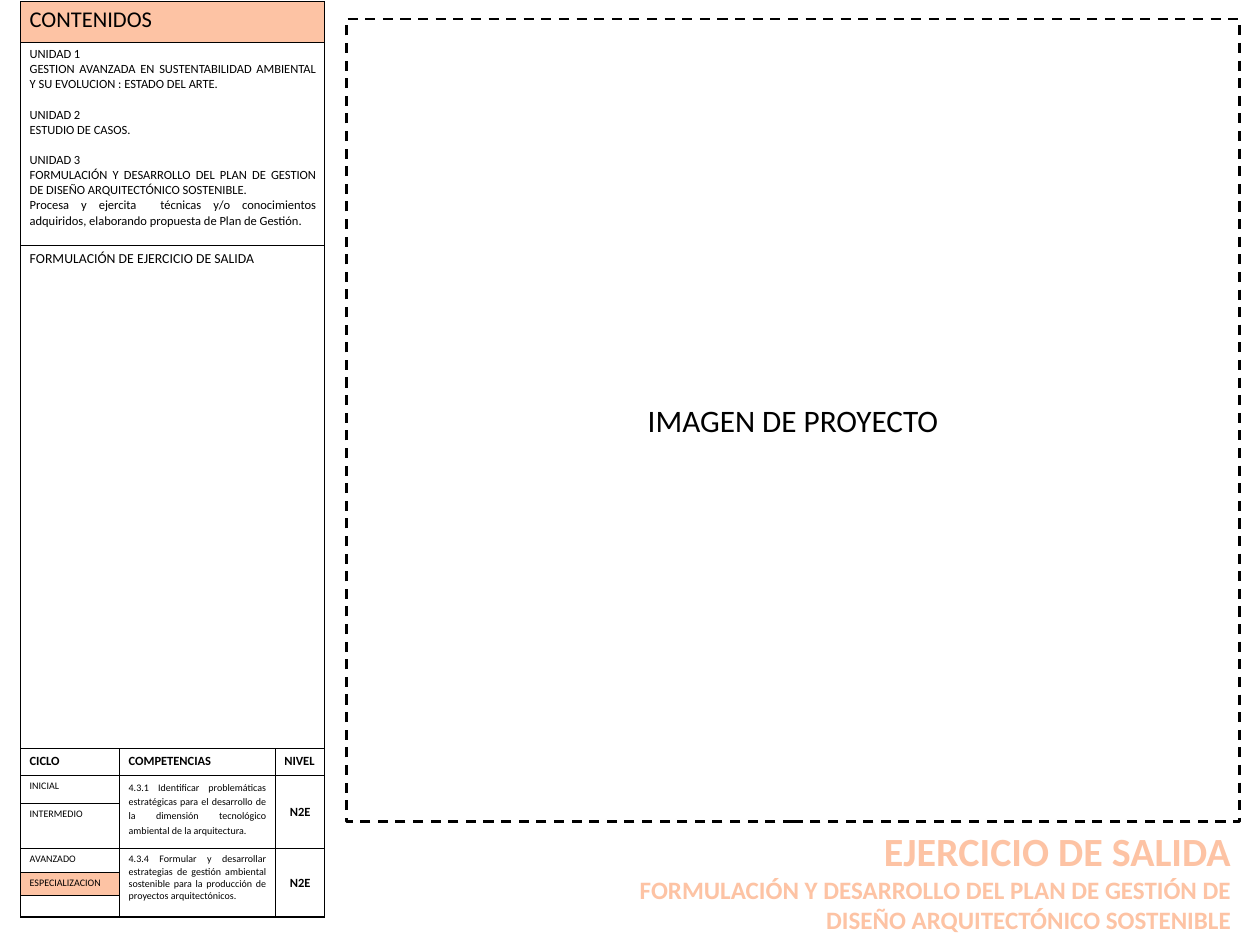
"""Build the course sheet: contents table, project frame and title."""
from lxml.etree import SubElement
from pptx import Presentation
from pptx.dml.color import RGBColor
from pptx.enum.dml import MSO_LINE
from pptx.enum.shapes import MSO_SHAPE
from pptx.enum.text import MSO_ANCHOR, PP_ALIGN
from pptx.oxml.ns import qn
from pptx.util import Inches, Pt

PEACH = RGBColor(0xFD, 0xC3, 0xA4)
BLACK = RGBColor(0, 0, 0)
FONT = "Calibri"
WIDE, HIGH = 14, 10.5
COLS = [1.1, 1.73, 0.55]
ROWS = [0.45, 2.26, 5.59, 0.3, 0.31, 0.5, 0.26, 0.26, 0.24]
UNITS = [
    ["UNIDAD 1", "GESTION AVANZADA EN SUSTENTABILIDAD AMBIENTAL Y SU EVOLUCION : ESTADO DEL ARTE."],
    ["UNIDAD 2", "ESTUDIO DE CASOS."],
    ["UNIDAD 3", "FORMULACIÓN Y DESARROLLO DEL PLAN DE GESTION DE DISEÑO ARQUITECTÓNICO SOSTENIBLE.",
     "Procesa y ejercita  técnicas y/o conocimientos adquiridos, elaborando propuesta de Plan de Gestión."],
]
BANDS = [("CONTENIDOS", 18), (None, 10), ("FORMULACIÓN DE EJERCICIO DE SALIDA", 11)]
HEADS = ["CICLO", "COMPETENCIAS", "NIVEL"]
CYCLES = ["INICIAL", "INTERMEDIO", "AVANZADO", "ESPECIALIZACION", ""]
SKILLS = [
    (4, 5, "4.3.1 Identificar problemáticas estratégicas para el desarrollo de la "
           "dimensión tecnológico ambiental de la arquitectura.", "N2E"),
    (6, 8, "4.3.4 Formular y desarrollar estrategias de gestión ambiental sostenible "
           "para la producción de proyectos arquitectónicos.", "N2E"),
]
TITLE = [("EJERCICIO DE SALIDA", 32),
         ("FORMULACIÓN Y DESARROLLO DEL PLAN DE GESTIÓN DE DISEÑO ARQUITECTÓNICO SOSTENIBLE", 20)]
PEACHY = {(0, 0), (7, 0)}
THIN = {(1, 0), (4, 0), (5, 0), (6, 0), (7, 0)}


def style(para, size, align, bold=False, color=BLACK):
    """Set the look of one paragraph."""
    para.alignment = align
    font = para.font
    font.name, font.size, font.bold = FONT, Pt(size), bold
    font.color.rgb = color


def write(cell, text, size, bold=False, align=PP_ALIGN.JUSTIFY):
    """Fill a cell and return its paragraphs."""
    cell.text = text
    for para in cell.text_frame.paragraphs:
        style(para, size, align, bold)
    return cell.text_frame.paragraphs


def edge(cell, side, width):
    """Draw one border of a cell."""
    line = SubElement(cell._tc.get_or_add_tcPr(), qn("a:" + side), w=str(Pt(width)))
    fill = SubElement(line, qn("a:solidFill"))
    SubElement(fill, qn("a:srgbClr"), val=str(BLACK))


def paint(table):
    """Give every cell its borders and fill."""
    for row in range(len(ROWS)):
        for col in range(len(COLS)):
            cell = table.cell(row, col)
            band = 0 if row < len(BANDS) else col
            edge(cell, "lnL", 1)
            edge(cell, "lnR", 1)
            edge(cell, "lnT", 0.5 if (row - 1, band) in THIN else 1)
            edge(cell, "lnB", 0.5 if (row, band) in THIN else 1)
            if (row, band) in PEACHY:
                cell.fill.solid()
                cell.fill.fore_color.rgb = PEACH
            else:
                cell.fill.background()


def add_grid(slide):
    """Add the contents table."""
    table = slide.shapes.add_table(len(ROWS), len(COLS), Inches(0.23), Inches(0.02),
                                   Inches(sum(COLS)), Inches(sum(ROWS))).table
    table.first_row = table.horz_banding = False
    for col, size in zip(table.columns, COLS):
        col.width = Inches(size)
    for row, size in zip(table.rows, ROWS):
        row.height = Inches(size)
    paint(table)
    for row, (text, size) in enumerate(BANDS):
        cell = table.cell(row, 0)
        cell.merge(table.cell(row, len(COLS) - 1))
        paras = write(cell, text or "\n".join(sum(UNITS, [])), size)
        for para in paras:
            if para.text in [unit[0] for unit in UNITS[1:]]:
                para.space_before = Pt(12)
    top = len(BANDS)
    for col, text in enumerate(HEADS):
        write(table.cell(top, col), text, 10, True)
    for row, text in enumerate(CYCLES, top + 1):
        write(table.cell(row, 0), text, 8)
    for first, last, text, level in SKILLS:
        for col in (1, 2):
            table.cell(first, col).merge(table.cell(last, col))
        para = write(table.cell(first, 1), text, 8)[0]
        if first == top + 1:
            para.line_spacing, para.space_after = 1.15, Pt(10)
        mark = table.cell(first, 2)
        write(mark, level, 10, True, PP_ALIGN.CENTER)
        mark.vertical_anchor = MSO_ANCHOR.MIDDLE


def add_frame(slide):
    """Add the dashed frame for the project."""
    frame = slide.shapes.add_shape(MSO_SHAPE.RECTANGLE, Inches(3.85), Inches(0.21),
                                   Inches(9.92), Inches(8.92))
    frame.shadow.inherit = False
    frame.fill.background()
    frame.line.color.rgb = BLACK
    frame.line.width = Pt(2)
    frame.line.dash_style = MSO_LINE.DASH
    frame.text_frame.text = "IMAGEN DE PROYECTO"
    frame.text_frame.vertical_anchor = MSO_ANCHOR.MIDDLE
    style(frame.text_frame.paragraphs[0], 25, PP_ALIGN.CENTER)


def set_title(slide):
    """Place and write the title."""
    title = slide.shapes.title
    title.left, title.top = Inches(6.13), Inches(9.13)
    title.width, title.height = Inches(7.65), Inches(1.31)
    body = title.text_frame
    body.text = "\n".join(text for text, size in TITLE)
    body.word_wrap = True
    body.vertical_anchor = MSO_ANCHOR.TOP
    for para, (text, size) in zip(body.paragraphs, TITLE):
        style(para, size, PP_ALIGN.RIGHT, True, PEACH)


def main():
    """Build and save the slide."""
    deck = Presentation()
    deck.slide_width, deck.slide_height = Inches(WIDE), Inches(HIGH)
    slide = deck.slides.add_slide(deck.slide_layouts[5])
    add_grid(slide)
    add_frame(slide)
    set_title(slide)
    deck.save("out.pptx")


if __name__ == "__main__":
    main()
